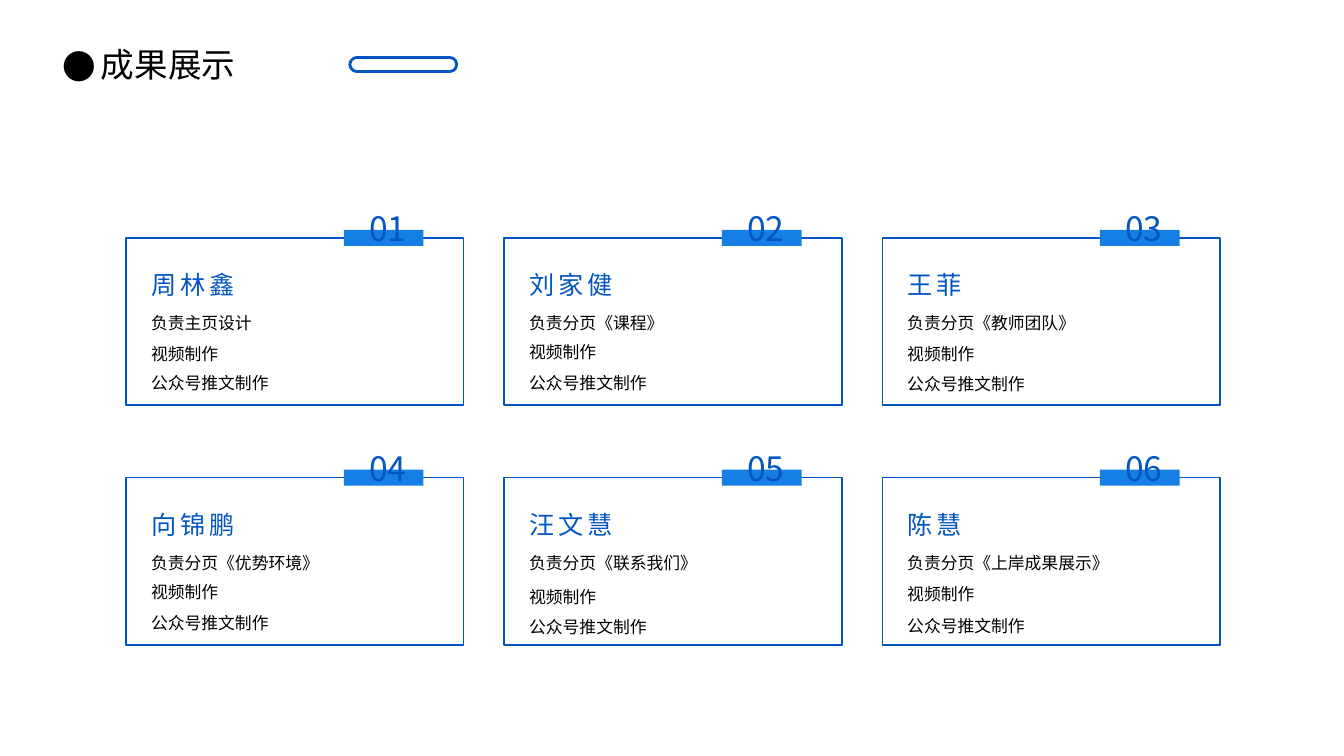
from lxml import etree
from pptx import Presentation
from pptx.dml.color import RGBColor
from pptx.enum.shapes import MSO_SHAPE
from pptx.enum.text import MSO_ANCHOR, MSO_AUTO_SIZE, PP_ALIGN
from pptx.oxml.ns import qn
from pptx.util import Pt

RECT, PILL = MSO_SHAPE.RECTANGLE, MSO_SHAPE.ROUNDED_RECTANGLE
TOP, GROW = MSO_ANCHOR.TOP, MSO_AUTO_SIZE.SHAPE_TO_FIT_TEXT
LEFT, CENTER, JUSTIFY = PP_ALIGN.LEFT, PP_ALIGN.CENTER, PP_ALIGN.JUSTIFY

PX = 9144
FONT = "Noto Sans CJK SC"
BLUE, BRIGHT, WHITE, BLACK = "0356C2", "157FE5", "FFFFFF", "000000"
TITLE_LAYOUT = 5

VIDEO, ARTICLE = "视频制作", "公众号推文制作"
MEMBERS = [
    ("周林鑫", "负责主页设计", 94, 123),
    ("刘家健", "负责分页《课程》", 92, 123),
    ("王菲", "负责分页《教师团队》", 94, 124),
    ("向锦鹏", "负责分页《优势环境》", 92, 123),
    ("汪文慧", "负责分页《联系我们》", 97, 127),
    ("陈慧", "负责分页《上岸成果展示》", 94, 126),
]
COLUMNS = 3
CARD_LEFT, CARD_TOP = 125, 236
COLUMN_STEP, ROW_STEP = 375, 238


def px(*lengths):
    return [length * PX for length in lengths]


def color(hex_code):
    return RGBColor.from_string(hex_code)


def write(frame, text, size=12, ink=BLACK, align=LEFT, wrap=True,
          line_spacing=None, tracking=None):
    frame.word_wrap = wrap
    frame.auto_size = GROW
    frame.vertical_anchor = TOP
    paragraph = frame.paragraphs[0]
    paragraph.alignment = align
    if line_spacing:
        paragraph.line_spacing = line_spacing
    run = paragraph.add_run()
    run.text = text
    run.font.size = Pt(size)
    run.font.name = FONT
    run.font.color.rgb = color(ink)
    properties = run.font._element
    etree.SubElement(properties, qn("a:ea"), typeface=FONT)
    if tracking:
        properties.set("spc", str(tracking * 100))
    return paragraph


class Deck:
    def __init__(self, width, height):
        self.presentation = Presentation()
        self.presentation.slide_width, self.presentation.slide_height = px(width, height)
        self.slide = self.presentation.slides.add_slide(
            self.presentation.slide_layouts[TITLE_LAYOUT])

    def title(self, text, left, top, width, height, indent, bullet):
        heading = self.slide.shapes.title
        heading.left, heading.top, heading.width, heading.height = px(left, top, width, height)
        paragraph = write(heading.text_frame, text, size=24, align=JUSTIFY)
        properties = paragraph._p.get_or_add_pPr()
        properties.set("marL", str(indent * PX))
        properties.set("indent", str(-indent * PX))
        etree.SubElement(properties, qn("a:buFont"), typeface=FONT)
        etree.SubElement(properties, qn("a:buChar"), char=bullet)

    def box(self, left, top, width, height, kind=RECT, fill=None, line=None, weight=1):
        shape = self.slide.shapes.add_shape(kind, *px(left, top, width, height))
        shape.shadow.inherit = False
        if fill:
            shape.fill.solid()
            shape.fill.fore_color.rgb = color(fill)
        else:
            shape.fill.background()
        if line:
            shape.line.color.rgb = color(line)
            shape.line.width = Pt(weight)
        else:
            shape.line.fill.background()
        return shape

    def text(self, text, left, top, width, height, **style):
        label = self.slide.shapes.add_textbox(*px(left, top, width, height))
        write(label.text_frame, text, **style)

    def card(self, number, left, top, member, duty, video_offset, article_offset):
        self.box(left, top, 335, 166, fill=WHITE, line=BLUE)
        self.text(member, left + 15, top + 26, 19 + 30 * len(member), 40,
                  size=18, ink=BLUE, wrap=False, tracking=3)
        tasks = [(duty, 63), (VIDEO, video_offset), (ARTICLE, article_offset)]
        for task, offset in tasks:
            self.text(task, left + 15, top + offset, 320, 34, line_spacing=1.3)
        self.box(left + 216, top - 8, 79, 16, fill=BRIGHT)
        self.text(f"{number:02d}", left + 229, top - 35, 61, 50,
                  size=24, ink=BLUE, align=CENTER, wrap=False)


def main():
    deck = Deck(1333, 750)
    deck.title("成果展示", 52, 39, 277, 50, indent=38, bullet="●")
    pill = deck.box(347, 57, 106, 14, kind=PILL, line=BLUE, weight=2)
    pill.adjustments[0] = 0.5
    for index, member in enumerate(MEMBERS):
        row, column = divmod(index, COLUMNS)
        deck.card(index + 1, CARD_LEFT + column * COLUMN_STEP,
                  CARD_TOP + row * ROW_STEP, *member)
    deck.presentation.save("out.pptx")


if __name__ == "__main__":
    main()
